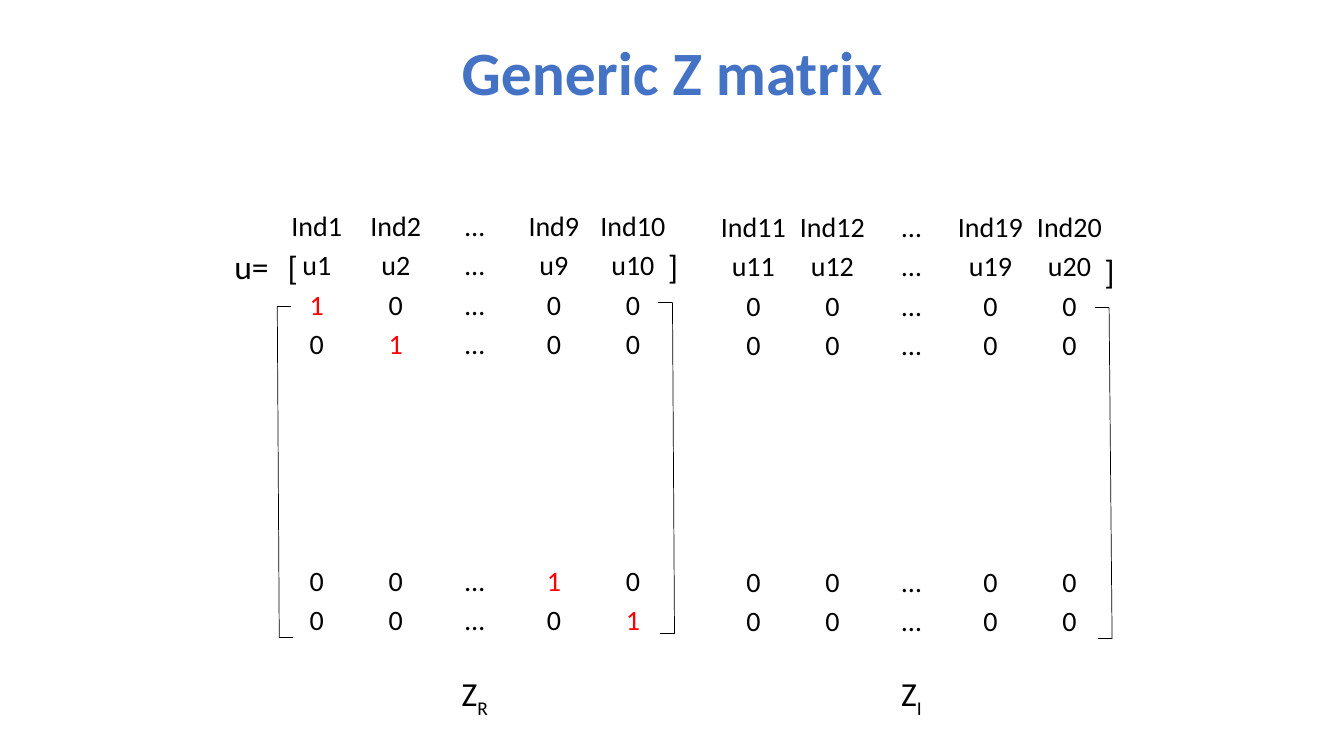
from dataclasses import dataclass
from typing import Optional

from lxml import etree
from pptx import Presentation
from pptx import util as u
from pptx.dml.color import RGBColor
from pptx.enum import shapes, text
from pptx.oxml.ns import qn
from pptx.slide import Slide
from pptx.text.text import _Paragraph as Paragraph


@dataclass(frozen=True)
class Theme:
    font: str = "Calibri"
    title_color: RGBColor = RGBColor(0x44, 0x72, 0xC4)
    ink: RGBColor = RGBColor(0, 0, 0)
    highlight: RGBColor = RGBColor(0xFF, 0, 0)
    title_size: int = 44
    label_size: int = 24
    cell_size: int = 20
    line_width: float = 0.5


@dataclass(frozen=True)
class Label:
    content: str
    left: float
    top: float
    width: float = 0.83
    height: float = 0.5
    subscript: str = ""


@dataclass(frozen=True)
class Matrix:
    """A block of Z; None among the individuals stands for the omitted ones."""
    left: float
    top: float
    individuals: tuple[Optional[int], ...]


@dataclass(frozen=True)
class Bracket:
    """A tall bracket; inward is 1 when its ticks point right, -1 when left."""
    left: float
    top: float
    skew: float
    inward: int


THEME = Theme()
COLUMN_WIDTH, ROW_HEIGHT, ROW_COUNT = 0.784, 0.391, 11
BRACKET_HEIGHT, TICK_LENGTH = 3.29, 0.14
RECORDS = {2: 1, 3: 2, 9: 9, 10: 10}  # table row -> individual observed
TITLE = Label("Generic Z matrix", 0.92, 0.02, 11.5, 1.45)
MATRICES = (
    Matrix(2.75, 2.03, (1, 2, None, 9, 10)),
    Matrix(7.08, 2.04, (11, 12, None, 19, 20)),
)
LABELS = (
    Label("u=", 2.08, 2.39),
    Label("[", 2.49, 2.4),
    Label("]", 6.26, 2.39),
    Label("]", 10.59, 2.44),
    Label("Z", 4.34, 6.63, 0.74, subscript="R"),
    Label("Z", 8.67, 6.63, 0.74, subscript="I"),
)
BRACKETS = (
    Bracket(2.75, 3.04, 0.02, 1),
    Bracket(6.67, 3.0, 0.02, -1),
    Bracket(11.0, 3.05, 0.03, -1),
)


def style_paragraph(paragraph: Paragraph, size: int, color: RGBColor, bold: bool = False) -> None:
    paragraph.alignment = text.PP_ALIGN.CENTER
    paragraph.font.name = THEME.font
    paragraph.font.size = u.Pt(size)
    paragraph.font.bold = bold
    paragraph.font.color.rgb = color


def add_label(slide: Slide, label: Label) -> Paragraph:
    box = slide.shapes.add_textbox(
        u.Inches(label.left), u.Inches(label.top), u.Inches(label.width), u.Inches(label.height)
    )
    box.text_frame.word_wrap = True
    paragraph = box.text_frame.paragraphs[0]
    paragraph.add_run().text = label.content
    if label.subscript:
        run = paragraph.add_run()
        run.text = label.subscript
        run._r.get_or_add_rPr().set("baseline", "-25000")
    style_paragraph(paragraph, THEME.label_size, THEME.ink)
    return paragraph


def add_title(slide: Slide) -> None:
    paragraph = add_label(slide, TITLE)
    style_paragraph(paragraph, THEME.title_size, THEME.title_color, bold=True)
    paragraph.line_spacing = 0.9
    slide.shapes[-1].text_frame.vertical_anchor = text.MSO_ANCHOR.MIDDLE


def cell_content(row: int, individual: Optional[int]) -> str:
    if row > 1 and row not in RECORDS:
        return ""
    if individual is None:
        return "…"
    if row < 2:
        return f"{('Ind', 'u')[row]}{individual}"
    return "1" if RECORDS[row] == individual else "0"


def add_matrix(slide: Slide, matrix: Matrix) -> None:
    column_count = len(matrix.individuals)
    table = slide.shapes.add_table(
        ROW_COUNT, column_count, u.Inches(matrix.left), u.Inches(matrix.top),
        u.Inches(column_count * COLUMN_WIDTH), u.Inches(ROW_COUNT * ROW_HEIGHT),
    ).table
    table.first_row = table.horz_banding = False
    for row in range(ROW_COUNT):
        for column, individual in enumerate(matrix.individuals):
            cell = table.cell(row, column)
            cell.fill.background()
            cell.margin_left = cell.margin_right = cell.margin_top = u.Inches(0.01)
            cell.margin_bottom = u.Inches(0)
            cell.vertical_anchor = text.MSO_ANCHOR.BOTTOM
            content = cell_content(row, individual)
            cell.text = content
            color = THEME.highlight if content == "1" else THEME.ink
            style_paragraph(cell.text_frame.paragraphs[0], THEME.cell_size, color)


def add_line(slide: Slide, x1: float, y1: float, x2: float, y2: float) -> None:
    line = slide.shapes.add_connector(
        shapes.MSO_CONNECTOR.STRAIGHT, u.Inches(x1), u.Inches(y1), u.Inches(x2), u.Inches(y2)
    )
    line.line.color.rgb = THEME.ink
    line.line.width = u.Pt(THEME.line_width)
    etree.SubElement(line._element.spPr, qn("a:effectLst"))


def add_bracket(slide: Slide, bracket: Bracket) -> None:
    foot_x = bracket.left + bracket.skew
    foot_y = bracket.top + BRACKET_HEIGHT
    add_line(slide, bracket.left, bracket.top, foot_x, foot_y)
    for x, y in ((bracket.left, bracket.top), (foot_x, foot_y - 0.01)):
        add_line(slide, x, y, x + bracket.inward * TICK_LENGTH, y)


def main() -> None:
    presentation = Presentation()
    presentation.slide_width = u.Inches(13.33)
    presentation.slide_height = u.Inches(7.5)
    slide = presentation.slides.add_slide(presentation.slide_layouts[6])
    add_title(slide)
    for matrix in MATRICES:
        add_matrix(slide, matrix)
    for label in LABELS:
        add_label(slide, label)
    for bracket in BRACKETS:
        add_bracket(slide, bracket)
    presentation.save("out.pptx")


if __name__ == "__main__":
    main()
